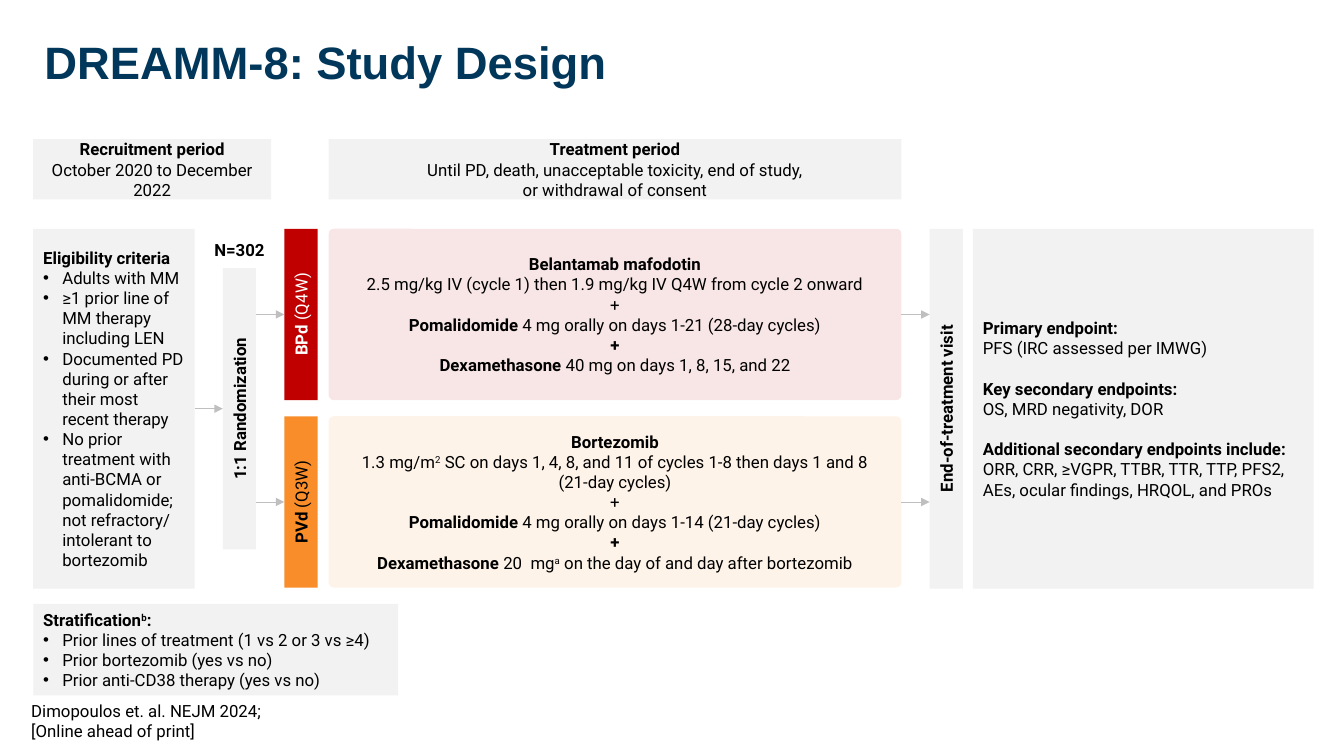
import pptx
import pptx.util
import pptx.dml.color
import pptx.enum.shapes
import pptx.enum.text
import pptx.oxml.ns
import lxml.etree
from dataclasses import dataclass

Inches = pptx.util.Inches
Pt = pptx.util.Pt
Shape = pptx.enum.shapes.MSO_SHAPE
Anchor = pptx.enum.text.MSO_ANCHOR
Align = pptx.enum.text.PP_ALIGN
qn = pptx.oxml.ns.qn


@dataclass(frozen=True)
class Theme:
    navy: str = "00375B"
    black: str = "000000"
    white: str = "FFFFFF"
    panel: str = "F2F2F2"
    red: str = "C00000"
    orange: str = "F88D29"
    cream: str = "FEF3E9"
    line: str = "BFBFBF"
    font: str = "Roboto"
    head: str = "Arial"
    size: float = 12
    title: float = 32.4
    gap: float = 14.4
    indent: float = 0.19


def rgb(code):
    return pptx.dml.color.RGBColor.from_string(code)


def bold(text):
    return (text, "b")


def sup(text, bold=False):
    return (text, "b^" if bold else "^")


class Board:
    """Holds the theme and the slide that is being drawn."""

    def __init__(self, theme, slide):
        self.theme = theme
        self.slide = slide

    def letter(self, shape, paras, align=Align.LEFT, color=None, inset=(0.1, 0.05),
               anchor=Anchor.MIDDLE, font=None, size=None):
        """Fill a shape with paragraphs; each is a list of runs, led by
        "•" for a bullet or "gap" for space above."""
        frame = shape.text_frame
        frame.word_wrap = True
        frame.vertical_anchor = anchor
        frame.margin_left = frame.margin_right = Inches(inset[0])
        frame.margin_top = frame.margin_bottom = Inches(inset[1])
        for i, runs in enumerate(paras):
            para = frame.add_paragraph() if i else frame.paragraphs[0]
            para.alignment = align
            if runs[0] == "•":
                self.bullet(para)
            elif runs[0] == "gap":
                para.space_before = Pt(self.theme.gap)
            for run in runs:
                if run in ("•", "gap"):
                    continue
                text, style = (run, "") if isinstance(run, str) else run
                for j, part in enumerate(text.split("\n")):
                    if j:
                        para.add_line_break()
                    item = para.add_run()
                    item.text = part
                    item.font.name = font or self.theme.font
                    item.font.size = Pt(size or self.theme.size)
                    item.font.bold = "b" in style
                    item.font.color.rgb = rgb(color or self.theme.black)
                    if "^" in style:
                        item._r.get_or_add_rPr().set("baseline", "30000")
        return shape

    def bullet(self, para):
        props = para._p.get_or_add_pPr()
        step = Inches(self.theme.indent)
        props.set("marL", str(step))
        props.set("indent", str(-step))
        lxml.etree.SubElement(props, qn("a:buFont")).set("typeface", "Arial")
        lxml.etree.SubElement(props, qn("a:buChar")).set("char", "•")

    def box(self, place, paras, fill=None, alpha=None, kind=Shape.RECTANGLE, **style):
        shape = self.slide.shapes.add_shape(kind, *map(Inches, place))
        shape.shadow.inherit = False
        shape.line.fill.background()
        shape.fill.solid()
        shape.fill.fore_color.rgb = rgb(fill or self.theme.panel)
        if alpha:
            tint = shape._element.spPr.find(qn("a:solidFill")).find(qn("a:srgbClr"))
            lxml.etree.SubElement(tint, qn("a:alpha")).set("val", str(alpha * 1000))
        return self.letter(shape, paras, **style)

    def card(self, place, paras, **style):
        shape = self.box(place, paras, kind=Shape.ROUNDED_RECTANGLE,
                         align=Align.CENTER, inset=(0.08, 0.05), **style)
        shape.adjustments[0] = 0.03
        return shape

    def strip(self, place, runs, **style):
        """Draw a narrow bar whose text reads upwards."""
        shape = self.box(place, [runs], align=Align.CENTER, **style)
        shape.text_frame._txBody.bodyPr.set("vert", "vert270")
        return shape

    def label(self, place, paras, **style):
        shape = self.slide.shapes.add_textbox(*map(Inches, place))
        return self.letter(shape, paras, **style)

    def arrow(self, start, end, y, source=None, target=None):
        """Draw a level arrow, joined to the source's right and target's left."""
        link = self.slide.shapes.add_connector(
            pptx.enum.shapes.MSO_CONNECTOR.STRAIGHT,
            Inches(start), Inches(y), Inches(end), Inches(y))
        if source is not None:
            link.begin_connect(source, 3)
        if target is not None:
            link.end_connect(target, 1)
        link.line.color.rgb = rgb(self.theme.line)
        link.line.width = Pt(0.5)
        ln = link.line._get_or_add_ln()
        lxml.etree.SubElement(ln, qn("a:tailEnd")).set("type", "triangle")
        lxml.etree.SubElement(link._element.spPr, qn("a:effectLst"))


def main():
    deck = pptx.Presentation()
    deck.slide_width, deck.slide_height = Inches(13.33), Inches(7.5)
    theme = Theme()
    board = Board(theme, deck.slides.add_slide(deck.slide_layouts[6]))

    left, arm, dose, visit = 0.33, 2.82, 3.26, 9.22
    bar, wide = 0.33, 5.68
    top, tall = 2.27, 3.57
    row, low = 1.7, 4.13

    title = board.label((0.31, 0.41, 10.24, 0.47), [[bold("DREAMM-8: Study Design")]],
                        color=theme.navy, font=theme.head, size=theme.title,
                        inset=(0.13, 0.13))
    title.text_frame.paragraphs[0].line_spacing = 0.9

    periods = [
        (left, 2.36, "Recruitment period", "October 2020 to December 2022"),
        (dose, wide, "Treatment period",
         "Until PD, death, unacceptable toxicity, end of study,\nor withdrawal of consent"),
    ]
    for x, width, name, text in periods:
        board.box((x, 1.38, width, 0.6), [[bold(name)], [text]], align=Align.CENTER)

    entry = board.box((left, top, 1.6, tall), [
        [bold("Eligibility criteria")],
        ["•", "Adults with MM"],
        ["•", "≥1 prior line of MM therapy including LEN"],
        ["•", "Documented PD during or after their most recent therapy"],
        ["•", "No prior treatment with anti-BCMA or pomalidomide; "
              "not refractory/ intolerant to bortezomib"],
    ])
    split = board.strip((2.21, 2.66, bar, 2.79), [bold("1:1 Randomization")])
    board.label((2.08, 2.38, 0.59, 0.2), [[bold("N=302")]],
                align=Align.CENTER, inset=(0, 0))
    board.strip((visit, top, bar, tall), [bold("End-of-treatment visit")])
    board.arrow(left + 1.6, 2.21, top + tall / 2, entry, split)

    arms = [
        (top, "BPd ", "(Q4W)", theme.red, theme.white, theme.red, 10, [
            [bold("Belantamab mafodotin")],
            ["2.5 mg/kg IV (cycle 1) then 1.9 mg/kg IV Q4W from cycle 2 onward"],
            ["+"],
            [bold("Pomalidomide "), "4 mg orally on days 1-21 (28-day cycles)"],
            [bold("+")],
            [bold("Dexamethasone "), "40 mg on days 1, 8, 15, and 22"],
        ]),
        (low, "PVd ", "(Q3W)", theme.orange, theme.black, theme.cream, None, [
            [bold("Bortezomib")],
            ["1.3 mg/m", sup("2"),
             " SC on days 1, 4, 8, and 11 of cycles 1-8 then days 1 and 8\n(21-day cycles)"],
            ["+"],
            [bold("Pomalidomide "), "4 mg orally on days 1-14 (21-day cycles)"],
            [bold("+")],
            [bold("Dexamethasone "), "20  mg", sup("a"),
             " on the day of and day after bortezomib"],
        ]),
    ]
    for y, name, cycle, fill, ink, tint, alpha, paras in arms:
        tag = board.strip((arm, y, bar, row), [bold(name), cycle], fill=fill, color=ink)
        card = board.card((dose, y, wide, row), paras, fill=tint, alpha=alpha)
        board.arrow(2.54, arm, y + row / 2, target=tag)
        board.arrow(dose + wide, visit, y + row / 2, source=card)

    board.box((9.65, top, 3.38, tall), [
        [bold("Primary endpoint:")],
        ["PFS (IRC assessed per IMWG)"],
        ["gap", bold("Key secondary endpoints:")],
        ["OS, MRD negativity, DOR"],
        ["gap", bold("Additional secondary endpoints include:")],
        ["ORR, CRR, ≥VGPR, TTBR, TTR, TTP, PFS2, AEs, ocular findings, HRQOL, and PROs"],
    ])
    board.box((left, 5.99, 3.62, 0.91), [
        [bold("Stratification"), sup("b", bold=True), bold(":")],
        ["•", "Prior lines of treatment (1 vs 2 or 3 vs ≥4)"],
        ["•", "Prior bortezomib (yes vs no)"],
        ["•", "Prior anti-CD38 therapy (yes vs no)"],
    ])
    board.label((0.31, 6.95, 2.64, 0.4),
                [["Dimopoulos et. al. NEJM 2024;\n[Online ahead of print]"]],
                inset=(0, 0), anchor=Anchor.BOTTOM)
    deck.save("out.pptx")


if __name__ == "__main__":
    main()
